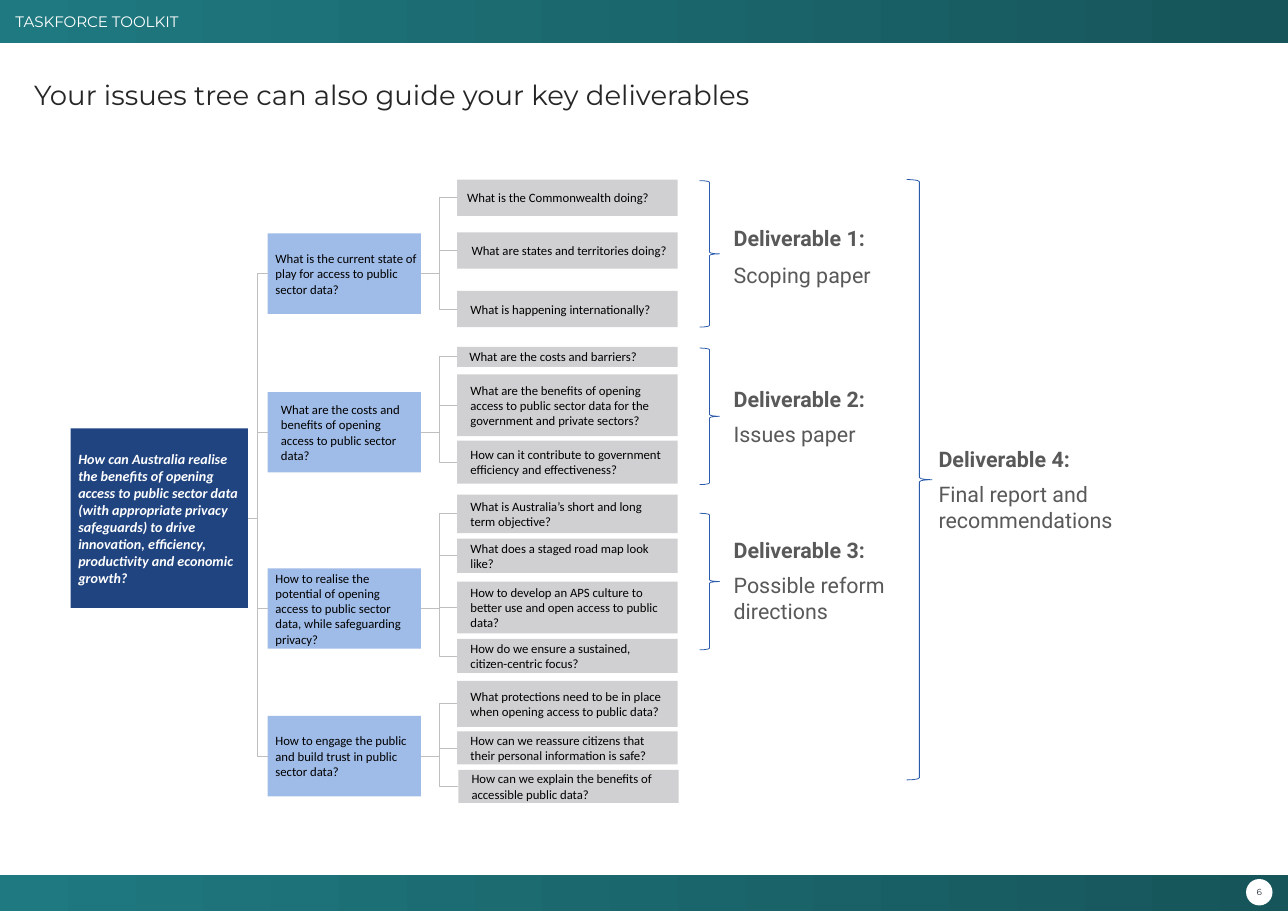
from pptx import Presentation
from pptx.dml.color import RGBColor
from pptx.enum.shapes import MSO_CONNECTOR, MSO_SHAPE
from pptx.enum.text import MSO_ANCHOR, MSO_AUTO_SIZE, PP_ALIGN
from pptx.oxml.ns import qn
from pptx.util import Inches, Pt
from lxml import etree

RECT = MSO_SHAPE.RECTANGLE
OVAL = MSO_SHAPE.OVAL
BRACE = MSO_SHAPE.RIGHT_BRACE
ELBOW = MSO_CONNECTOR.ELBOW
MIDDLE = MSO_ANCHOR.MIDDLE
TOP = MSO_ANCHOR.TOP
LEFT = PP_ALIGN.LEFT
CENTER = PP_ALIGN.CENTER
FIXED = MSO_AUTO_SIZE.NONE

WIDTH, HEIGHT = 11.69, 8.27
ROOT = (0.64, 3.89, 1.61, 1.63)
ISSUE_X, ISSUE_W, ISSUE_H = 2.43, 1.39, 0.73
LEAF_X, LEAF_W = 4.15, 2

QUESTION = (
    "How can Australia realise the benefits of opening access to public "
    "sector data (with appropriate privacy safeguards) to drive innovation, "
    "efficiency, productivity and economic growth?"
)

# Issue: top, left and right inset, text, leaves.
# Leaf: top, height, left inset, text, shift.
ISSUES = [
    (2.12, 0.07, 0.03, "What is the current state of play for access to public sector data?", [
        (1.63, 0.33, 0.09, "What is the Commonwealth doing?", 0),
        (2.11, 0.33, 0.13, "What are states and territories doing?", 0),
        (2.64, 0.33, 0.12, "What is happening internationally?", 0),
    ]),
    (3.56, 0.12, 0.12, "What are the costs and benefits of opening access to public sector data?", [
        (3.15, 0.18, 0.11, "What are the costs and barriers?", 0),
        (3.4, 0.56, 0.12, "What are the benefits of opening access to public sector data "
                          "for the government and private sectors?", 0),
        (4, 0.39, 0.12, "How can it contribute to government efficiency and effectiveness?", 0),
    ]),
    (5.16, 0.07, 0.07, "How to realise the potential of opening access to public sector data, "
                       "while safeguarding privacy?", [
        (4.49, 0.35, 0.12, "What is Australia’s short and long term objective?", 0),
        (4.89, 0.31, 0.12, "What does a staged road map look like?", 0),
        (5.28, 0.47, 0.12, "How to develop an APS culture to better use and open access "
                           "to public data?", 0),
        (5.8, 0.31, 0.12, "How do we ensure a sustained, citizen-centric focus?", 0),
    ]),
    (6.5, 0.07, 0.07, "How to engage the public and build trust in public sector data?", [
        (6.18, 0.42, 0.12, "What protections need to be in place when opening access "
                           "to public data?", 0),
        (6.64, 0.3, 0.12, "How can we reassure citizens that their personal information "
                          "is safe?", 0),
        (6.99, 0.3, 0.12, "How can we explain the benefits of accessible public data?", 0.01),
    ]),
]

DELIVERABLES = [
    ((6.56, 1.99, 1.75, 0.68), "Scoping paper", 1.1, (6.35, 1.64, 0.18, 1.33)),
    ((6.56, 3.46, 1.75, 0.68), "Issues paper", 1, (6.35, 3.16, 0.18, 1.24)),
    ((6.56, 4.83, 1.75, 0.89), "Possible reform directions", 1, (6.35, 4.66, 0.18, 1.24)),
    ((8.42, 4, 1.96, 0.89), "Final report and recommendations", 1, (8.23, 1.63, 0.23, 5.45)),
]


def color(code):
    return RGBColor.from_string(code)


def style(para, font, size, code, bold=False, italic=False):
    for run in para.runs:
        run.font.name = font
        run.font.size = Pt(size)
        run.font.color.rgb = color(code)
        run.font.bold = bold
        run.font.italic = italic


def shape(slide, kind, box, fill=None):
    item = slide.shapes.add_shape(kind, *map(Inches, box))
    item.shadow.inherit = False
    item.line.fill.background()
    if fill:
        item.fill.solid()
        item.fill.fore_color.rgb = color(fill)
    else:
        item.fill.background()
    return item


def label(item, text, font, size, code, left=0, right=0, align=LEFT, **marks):
    frame = item.text_frame
    frame.text = text
    frame.word_wrap = True
    frame.vertical_anchor = MIDDLE
    frame.margin_left, frame.margin_right = Inches(left), Inches(right)
    frame.margin_top = frame.margin_bottom = 0
    para = frame.paragraphs[0]
    para.alignment = align
    style(para, font, size, code, **marks)


def bar(slide, top, height):
    item = shape(slide, RECT, (0, top, WIDTH, height))
    item.fill.gradient()
    item.fill.gradient_angle = 0
    for stop, code in zip(item.fill.gradient_stops, ("1F7980", "16555A")):
        stop.color.rgb = color(code)
    return item


def link(slide, start, end):
    line = slide.shapes.add_connector(ELBOW, *map(Inches, start + end))
    line.line.color.rgb = color("BFBFBF")
    line.line.width = Pt(0.5)
    etree.SubElement(line._element.spPr, qn("a:effectLst"))


def title(slide, text):
    item = slide.shapes.title
    item.left, item.top, item.width, item.height = map(Inches, (0.31, 0.68, 7.81, 0.74))
    label(item, text, "Montserrat", 18, "262626")
    item.text_frame.vertical_anchor = TOP
    item.text_frame.auto_size = FIXED
    item.text_frame.paragraphs[0].line_spacing = 1.1


def tree(slide):
    left, top, width, height = ROOT
    root = shape(slide, RECT, ROOT, "204480")
    label(root, QUESTION, "Calibri", 9.2, "FFFFFF", 0.07, 0.07, bold=True, italic=True)
    stem = (left + width, top + height / 2)
    for top, left, right, text, leaves in ISSUES:
        issue = shape(slide, RECT, (ISSUE_X, top, ISSUE_W, ISSUE_H), "9FBBE7")
        label(issue, text, "Calibri", 8.3, "000000", left, right)
        middle = top + ISSUE_H / 2
        link(slide, stem, (ISSUE_X, middle))
        for y, tall, inset, words, shift in leaves:
            x = LEAF_X + shift
            leaf = shape(slide, RECT, (x, y, LEAF_W, tall), "D0D0D2")
            label(leaf, words, "Calibri", 8.3, "000000", inset, 0.1)
            link(slide, (ISSUE_X + ISSUE_W, middle), (x, y + tall / 2))


def result(slide, number, box, text, spacing, span):
    frame = slide.shapes.add_textbox(*map(Inches, box)).text_frame
    frame.word_wrap = True
    frame.text = f"Deliverable {number}:\n{text}"
    head, body = frame.paragraphs
    style(head, "Roboto", 14, "595959", bold=True)
    style(body, "Roboto", 14, "595959")
    head.space_after = body.space_after = Pt(6)
    body.line_spacing = spacing
    brace = shape(slide, BRACE, span)
    brace.line.color.rgb = color("2A5BAA")
    brace.line.width = Pt(0.5)


def main():
    deck = Presentation()
    deck.slide_width, deck.slide_height = Inches(WIDTH), Inches(HEIGHT)
    slide = deck.slides.add_slide(deck.slide_layouts[5])
    label(bar(slide, 0, 0.39), "TASKFORCE TOOLKIT", "Montserrat", 9.9, "FFFFFF", 0.14)
    bar(slide, 7.94, 0.33)
    page = shape(slide, OVAL, (11.31, 7.98, 0.24, 0.24), "FFFFFF")
    label(page, "6", "Montserrat", 5.7, "222A35", align=CENTER)
    title(slide, "Your issues tree can also guide your key deliverables")
    tree(slide)
    for number, item in enumerate(DELIVERABLES, 1):
        result(slide, number, *item)
    deck.save("out.pptx")


if __name__ == "__main__":
    main()
